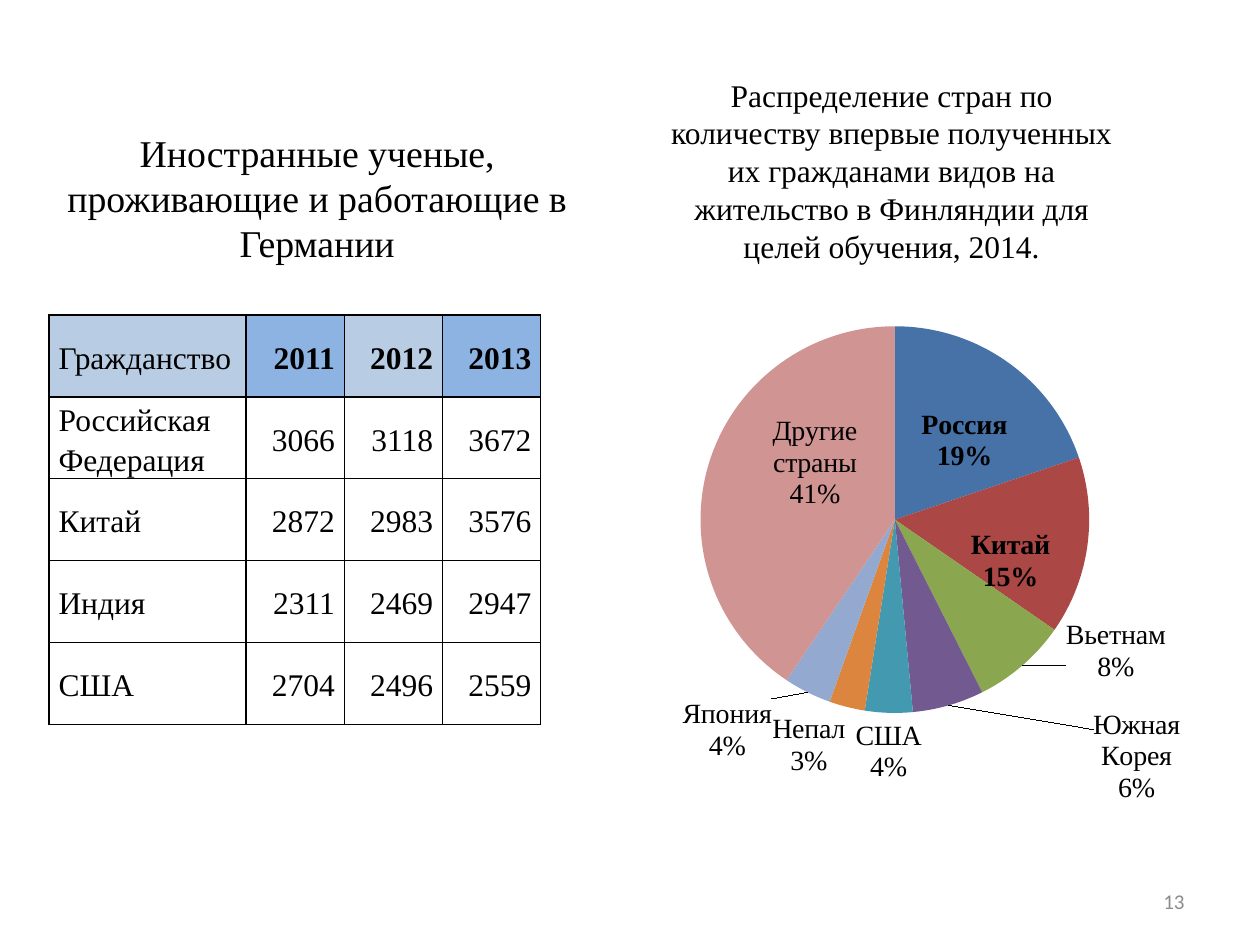
from lxml import etree
from pptx import Presentation
from pptx.chart.data import CategoryChartData
from pptx.dml.color import RGBColor
from pptx.enum.chart import XL_CHART_TYPE, XL_LABEL_POSITION
from pptx.enum.text import MSO_ANCHOR, MSO_AUTO_SIZE, PP_ALIGN
from pptx.oxml import parse_xml
from pptx.oxml.ns import nsdecls, qn
from pptx.util import Cm, Pt

COLORS = {
    "text": "000000", "number": "8C8C8C", "white": "FFFFFF",
    "head_light": "B8CCE4", "head_dark": "8DB3E2",
}
SERIF = "Times New Roman"

TABLE_ROWS = [
    ("Гражданство", "2011", "2012", "2013"),
    ("Российская Федерация", "3066", "3118", "3672"),
    ("Китай", "2872", "2983", "3576"),
    ("Индия", "2311", "2469", "2947"),
    ("США", "2704", "2496", "2559"),
]

# country, value, slice colour, label position, label offset (share of chart)
CENTER, OUTSIDE = XL_LABEL_POSITION.CENTER, XL_LABEL_POSITION.OUTSIDE_END
SLICES = [
    ("Россия", 20, "4672A8", CENTER, (0.02, 0)),
    ("Китай", 15, "AB4744", CENTER, (0.03, 0.05)),
    ("Вьетнам", 8, "8AA64F", OUTSIDE, (0.06, -0.09)),
    ("Южная Корея", 6, "725A90", OUTSIDE, (0.22, 0.03)),
    ("США", 4, "4299B0", OUTSIDE, (0, 0)),
    ("Непал", 3, "DC853E", OUTSIDE, (0, 0)),
    ("Япония", 4, "93A9CF", OUTSIDE, (-0.05, 0)),
    ("Другие страны", 41, "D09493", CENTER, (0.02, -0.05)),
]


def rgb(name):
    return RGBColor.from_string(COLORS.get(name, name))


def style_font(font, size=18, name=SERIF, color="text", bold=False):
    font.size, font.name, font.bold = Pt(size), name, bold
    font.color.rgb = rgb(color)


def write(tf, text, align=PP_ALIGN.CENTER, anchor=MSO_ANCHOR.TOP, spacing=None, **font):
    tf.word_wrap = True
    tf.vertical_anchor = anchor
    p = tf.paragraphs[0]
    p.alignment = align
    if spacing:
        p.line_spacing = spacing
    r = p.add_run()
    r.text = text
    style_font(r.font, **font)


def manual_layout(x, y, w=None, h=None):
    parts = [("xMode", "edge"), ("yMode", "edge")] if w else []
    if w:
        parts.insert(0, ("layoutTarget", "inner"))
    parts += [(k, v) for k, v in zip("xywh", (x, y, w, h)) if v is not None]
    body = "".join(f'<c:{k} val="{v}"/>' for k, v in parts)
    return parse_xml(f'<c:layout {nsdecls("c")}><c:manualLayout>{body}</c:manualLayout></c:layout>')


def show_category_percent(labels):
    """Show the category above the percentage in a label or group of labels."""
    for tag in ("showLegendKey", "showVal", "showCatName", "showSerName", "showPercent"):
        el = labels.find(qn(f"c:{tag}"))
        if el is not None:
            el.set("val", "1" if tag in ("showCatName", "showPercent") else "0")
    last = labels.find(qn("c:showBubbleSize"))
    if last is None:
        last = labels.find(qn("c:showPercent"))
    separator = etree.Element(qn("c:separator"))
    separator.text = "\n"
    last.addnext(separator)


class SlideBuilder:
    def __init__(self, prs):
        self.s = prs.slides.add_slide(prs.slide_layouts[5])

    def title(self, text, box, **style):
        sp = self.s.shapes.title
        sp.left, sp.top, sp.width, sp.height = map(Cm, box)
        sp.text_frame.auto_size = MSO_AUTO_SIZE.NONE
        write(sp.text_frame, text, **style)

    def text(self, text, box, **style):
        write(self.s.shapes.add_textbox(*map(Cm, box)).text_frame, text, **style)

    def cell(self, cell, text, fill=None, **style):
        cell.margin_left = cell.margin_right = Cm(0.19)
        cell.margin_top = cell.margin_bottom = 0
        cell.vertical_anchor = MSO_ANCHOR.MIDDLE
        write(cell.text_frame, text, anchor=None, spacing=1.15, **style)
        tcPr = cell._tc.get_or_add_tcPr()
        for side in ("lnL", "lnR", "lnT", "lnB"):
            tcPr.append(parse_xml(
                f'<a:{side} {nsdecls("a")} w="12700"><a:solidFill>'
                f'<a:srgbClr val="{COLORS["text"]}"/></a:solidFill></a:{side}>'))
        if fill:
            cell.fill.solid()
            cell.fill.fore_color.rgb = rgb(fill)
        else:
            cell.fill.background()

    def table(self, rows, left, top, widths, row_height):
        table = self.s.shapes.add_table(
            len(rows), len(widths), Cm(left), Cm(top),
            Cm(sum(widths)), Cm(row_height * len(rows))).table
        for column, width in zip(table.columns, widths):
            column.width = Cm(width)
        for i, row in enumerate(rows):
            for j, value in enumerate(row):
                fill = ("head_light", "head_dark")[j % 2] if i == 0 else None
                self.cell(table.cell(i, j), value, fill, bold=i == 0 and j > 0,
                          align=PP_ALIGN.RIGHT if j else PP_ALIGN.JUSTIFY)

    def pie(self, slices, box, plot_area):
        data = CategoryChartData()
        data.categories = [item[0] for item in slices]
        data.add_series("Series 1", [item[1] for item in slices])
        chart = self.s.shapes.add_chart(XL_CHART_TYPE.PIE, *map(Cm, box), data).chart
        chart.has_legend = chart.has_title = False
        style_font(chart.font, 10, "Calibri")
        area = chart._chartSpace.chart.plotArea
        for old in area.findall(qn("c:layout")):
            area.remove(old)
        area.insert(0, manual_layout(*plot_area))

        # Slices and their labels
        series = chart.plots[0].series[0]
        labels = series.data_labels
        style_font(labels.font, 16)
        for i, (name, _, color, position, offset) in enumerate(slices):
            point = series.points[i]
            point.format.fill.solid()
            point.format.fill.fore_color.rgb = rgb(color)
            label = point.data_label
            if i == 0:  # the stated share differs from the computed one
                p = label.text_frame.paragraphs[0]
                for line in (name + "\n", "19%"):
                    r = p.add_run()
                    r.text = line
                    style_font(r.font, 16, bold=True)
            else:
                style_font(label.font, 16, bold=i == 1)
            label.position = position
        for dLbl, item in zip(labels._element.findall(qn("c:dLbl")), slices):
            dLbl.find(qn("c:idx")).addnext(manual_layout(*item[4]))
            show_category_percent(dLbl)
        show_category_percent(labels._element)
        labels.show_percentage = labels.show_category_name = True
        labels._element.append(parse_xml(f'<c:showLeaderLines {nsdecls("c")} val="1"/>'))


def main():
    prs = Presentation()
    prs.slide_width, prs.slide_height = Cm(25.4), Cm(19.05)
    b = SlideBuilder(prs)

    # Left half: scientists in Germany
    b.title("Иностранные ученые, проживающие и работающие в Германии",
            (0.58, 2.39, 11.63, 3.18), anchor=MSO_ANCHOR.MIDDLE, size=21.6)
    b.table(TABLE_ROWS, 0.99, 6.35, (3.97, 1.98, 1.98, 1.98), 1.65)

    # Right half: residence permits in Finland
    b.pie(SLICES, (11.51, 4.75, 13.06, 11.51), (0.2, 0.1, 0.6, 0.8))
    b.text("Распределение стран по количеству впервые полученных их гражданами "
           "видов на жительство в Финляндии для целей обучения, 2014.",
           (13.11, 1.4, 9.73, 4.11))

    # Slide number
    b.text("13", (18.21, 17.65, 5.92, 1.02), align=PP_ALIGN.RIGHT,
           anchor=MSO_ANCHOR.MIDDLE, size=12, name="Calibri", color="number")
    prs.save("out.pptx")


if __name__ == "__main__":
    main()
